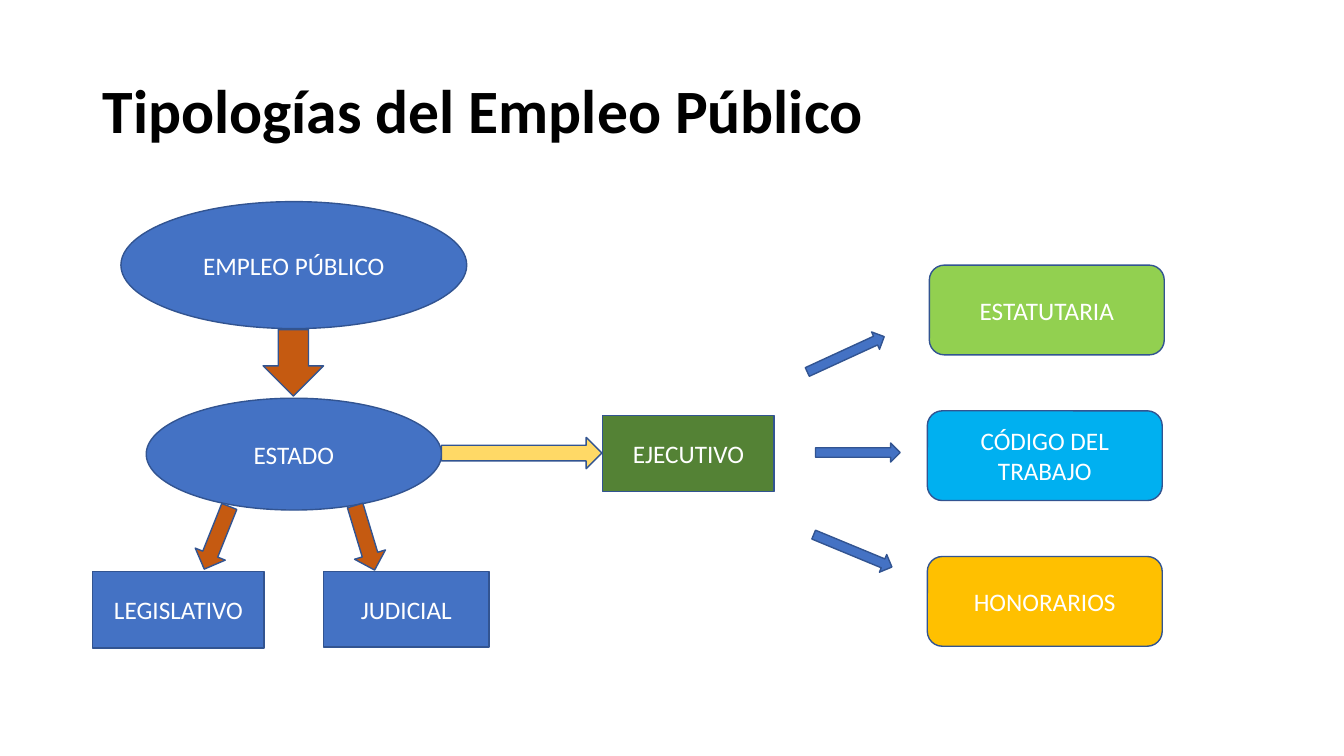
from dataclasses import dataclass

from pptx import Presentation
from pptx.dml.color import RGBColor
from pptx.enum.shapes import MSO_SHAPE as Kind
from pptx.enum.text import MSO_ANCHOR as Anchor, MSO_AUTO_SIZE as Fit, PP_ALIGN as Align
from pptx.util import Inches, Pt

WIDE, HIGH = Inches(13.33), Inches(7.5)
BLUE, RUST, EDGE = "4472C4", "C55A11", "325491"


@dataclass
class Item:
    """A shape whose place and size are percentages of the slide."""
    kind: Kind
    x: float
    y: float
    w: float
    h: float
    fill: str = BLUE
    text: str = ""
    turn: float = 0


def color(code: str) -> RGBColor:
    """Turn a hex string into a colour."""
    return RGBColor.from_string(code)


def area(x: float, y: float, w: float, h: float) -> tuple[int, ...]:
    """Turn percentages of the slide into lengths."""
    return tuple(round(part * side / 100) for part, side in
                 zip((x, y, w, h), (WIDE, HIGH) * 2))


def write(shape, text: str, *, size: float = 18, ink: str = "FFFFFF",
          bold: bool = False, align=Align.CENTER, space: float = 1) -> None:
    """Put formatted text in a shape."""
    frame = shape.text_frame
    frame.text = text
    frame.word_wrap = True
    frame.auto_size = Fit.NONE
    frame.vertical_anchor = Anchor.MIDDLE
    par = frame.paragraphs[0]
    par.alignment, par.line_spacing = align, space
    font = par.runs[0].font
    font.name, font.size, font.bold = "Calibri", Pt(size), bold
    font.color.rgb = color(ink)


def draw(slide, item: Item) -> None:
    """Add one shape of the diagram."""
    shape = slide.shapes.add_shape(item.kind, *area(item.x, item.y, item.w, item.h))
    shape.rotation = item.turn
    shape.shadow.inherit = False
    shape.fill.solid()
    shape.fill.fore_color.rgb = color(item.fill)
    shape.line.color.rgb = color(EDGE)
    shape.line.width = Pt(1)
    if item.text:
        write(shape, item.text)


STATE = [
    Item(Kind.OVAL, 9, 26.67, 25.73, 16.8, text="EMPLEO PÚBLICO"),
    Item(Kind.DOWN_ARROW, 19.58, 43.6, 4.5, 8.8, RUST),
    Item(Kind.OVAL, 10.88, 52.67, 21.98, 14.8, text="ESTADO"),
    Item(Kind.DOWN_ARROW, 14.93, 66.67, 2.4, 8.93, RUST, turn=21.8),
    Item(Kind.DOWN_ARROW, 25.95, 66.67, 2.4, 8.93, RUST, turn=343.2),
    Item(Kind.DOWN_ARROW, 37.65, 49.33, 2.33, 21.2, "FFD966", turn=270),
    Item(Kind.RECTANGLE, 6.9, 75.6, 12.75, 10.13, text="LEGISLATIVO"),
    Item(Kind.RECTANGLE, 24.08, 75.6, 12.3, 10, text="JUDICIAL"),
    Item(Kind.RECTANGLE, 44.85, 54.93, 12.75, 10.13, "548235", "EJECUTIVO"),
]
ARROWS = [
    Item(Kind.RIGHT_ARROW, x, 45.6 + 13 * row, 6.3, 2.53, turn=turn)
    for row, (x, turn) in enumerate([(59.78, 335.3), (60.68, 0), (60.3, 22.5)])
]
REGIMES = [
    Item(Kind.ROUNDED_RECTANGLE, x, 35.07 + 19.27 * row, 17.48, 11.87, fill, text)
    for row, (x, fill, text) in enumerate([
        (69.15, "92D050", "ESTATUTARIA"),
        (69, "00B0F0", "CÓDIGO DEL TRABAJO"),
        (69, "FFC000", "HONORARIOS"),
    ])
]


def main() -> None:
    """Build and save the slide."""
    deck = Presentation()
    deck.slide_width, deck.slide_height = WIDE, HIGH
    slide = deck.slides.add_slide(deck.slide_layouts[5])
    title = slide.shapes.title
    title.left, title.top, title.width, title.height = area(6.9, 5.33, 86.25, 19.33)
    write(title, "Tipologías del Empleo Público", size=44, ink="000000",
          bold=True, align=Align.LEFT, space=0.9)
    for item in STATE + ARROWS + REGIMES:
        draw(slide, item)
    deck.save("out.pptx")


if __name__ == "__main__":
    main()
